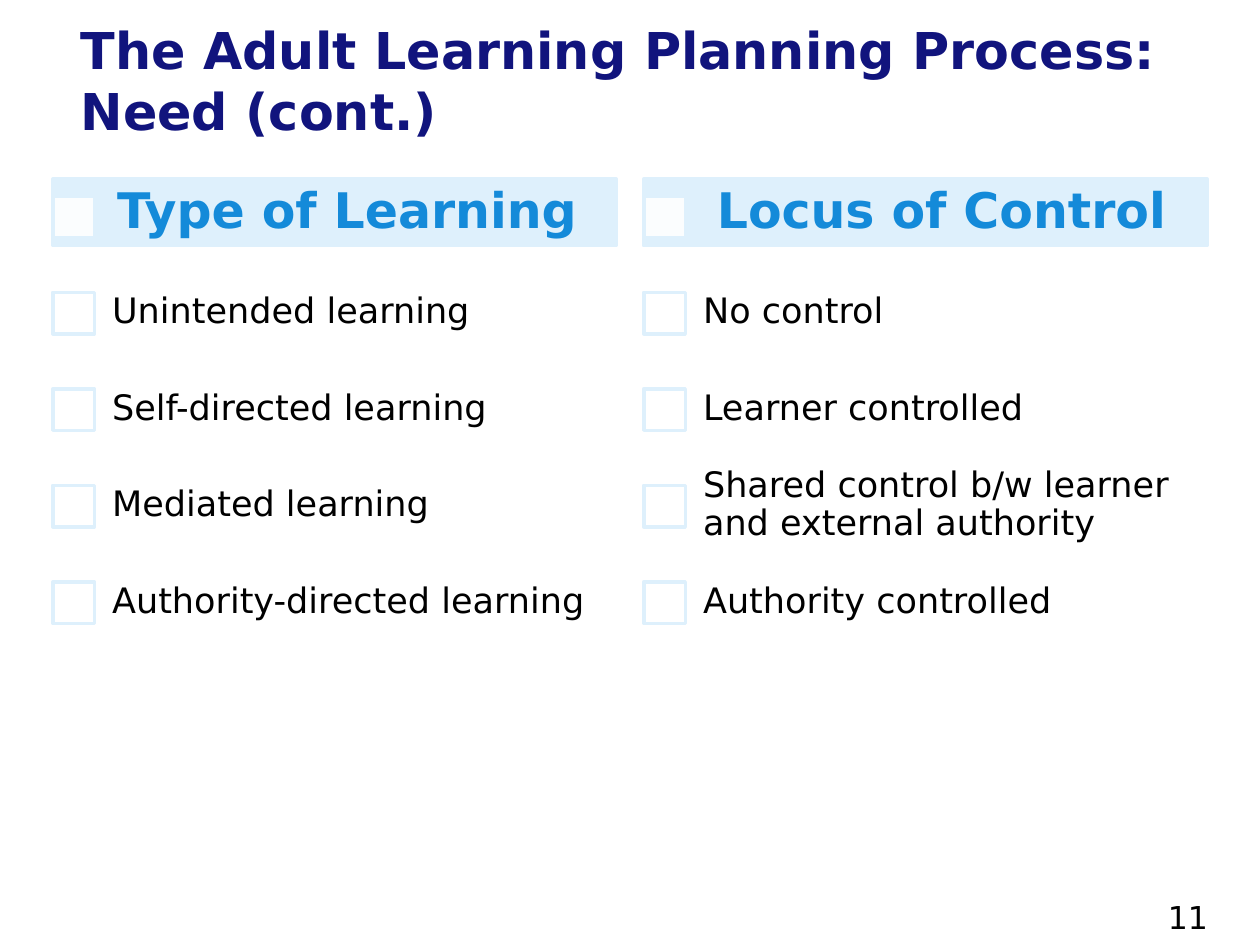
from lxml.etree import SubElement
from pptx import Presentation
from pptx.dml.color import RGBColor
from pptx.enum.shapes import MSO_SHAPE
from pptx.enum.text import MSO_ANCHOR
from pptx.oxml.ns import qn
from pptx.util import Inches, Pt

COLORS = {"navy": "11147D", "blue": "148AD9", "pale": "DEF0FC",
          "white": "FFFFFF", "black": "000000"}

deck = Presentation()
deck.slide_width, deck.slide_height = Inches(10), Inches(7.5)
slide = deck.slides.add_slide(deck.slide_layouts[6])


def add_rect(left, top, width, height, fill):
    rect = slide.shapes.add_shape(MSO_SHAPE.RECTANGLE, Inches(left), Inches(top),
                                  Inches(width), Inches(height))
    rect.shadow.inherit = False
    rect.fill.solid()
    rect.fill.fore_color.rgb = RGBColor.from_string(COLORS[fill])
    rect.line.color.rgb = RGBColor.from_string(COLORS["pale"])
    rect.line.width = Pt(2)
    return rect


def add_text(text, left, top, width, height, size, color, bold=False,
             insets=(0.1, 0.05, 0.1, 0.05), anchor=MSO_ANCHOR.MIDDLE, spacing=None):
    frame = slide.shapes.add_textbox(Inches(left), Inches(top),
                                     Inches(width), Inches(height)).text_frame
    frame.word_wrap = True
    frame.vertical_anchor = anchor
    (frame.margin_left, frame.margin_top,
     frame.margin_right, frame.margin_bottom) = [Inches(inset) for inset in insets]
    frame.text = text
    paragraph = frame.paragraphs[0]
    paragraph.line_spacing = spacing
    font = paragraph.runs[0].font
    font.name, font.size, font.bold = "DejaVu Sans", Pt(size), bold
    font.color.rgb = RGBColor.from_string(COLORS[color])


# Title and page number
add_text("The Adult Learning Planning Process: Need (cont.)", 0.33, 0.17, 9.5, 0.92,
         29, "navy", bold=True, insets=(0.31, 0.05, 0.1, 0.05))
add_text("11", 9.17, 7.08, 0.83, 0.27, 18, "black", anchor=MSO_ANCHOR.TOP)

# Two checklists: left edge, heading, heading text left and inset, items
checklists = [
    (0.42, "Type of Learning", 0.87, 0.06,
     ["Unintended learning", "Self-directed learning",
      "Mediated learning", "Authority-directed learning"]),
    (5.11, "Locus of Control", 5.08, 0.61,
     ["No control", "Learner controlled",
      "Shared control b/w learner and external authority", "Authority controlled"]),
]
BOX = 0.33
FIRST_ROW, ROW_PITCH, ROW_HEIGHT = 2.1, 0.766, 0.76

for left, heading, heading_left, heading_inset, items in checklists:
    # Heading bar with a slightly transparent box
    add_rect(left, 1.42, 4.47, 0.53, "pale")
    heading_box = add_rect(left, 1.56, BOX, BOX, "white")
    box_color = heading_box.fill._xPr.find(qn("a:solidFill"))[0]
    SubElement(box_color, qn("a:alpha"), val="90000")
    add_text(heading, heading_left, 1.22, 4.47, 0.94, 28, "blue", bold=True,
             insets=(heading_inset, 0.04, 0.06, 0.04), spacing=0.9)

    # Checkbox rows
    for row, item in enumerate(items):
        top = FIRST_ROW + row * ROW_PITCH
        add_rect(left, top + 0.22, BOX, BOX, "white")
        add_text(item, left + 0.31, top, 4.15, ROW_HEIGHT, 20, "black",
                 insets=(0.16,) * 4, spacing=0.9)

deck.save("out.pptx")
